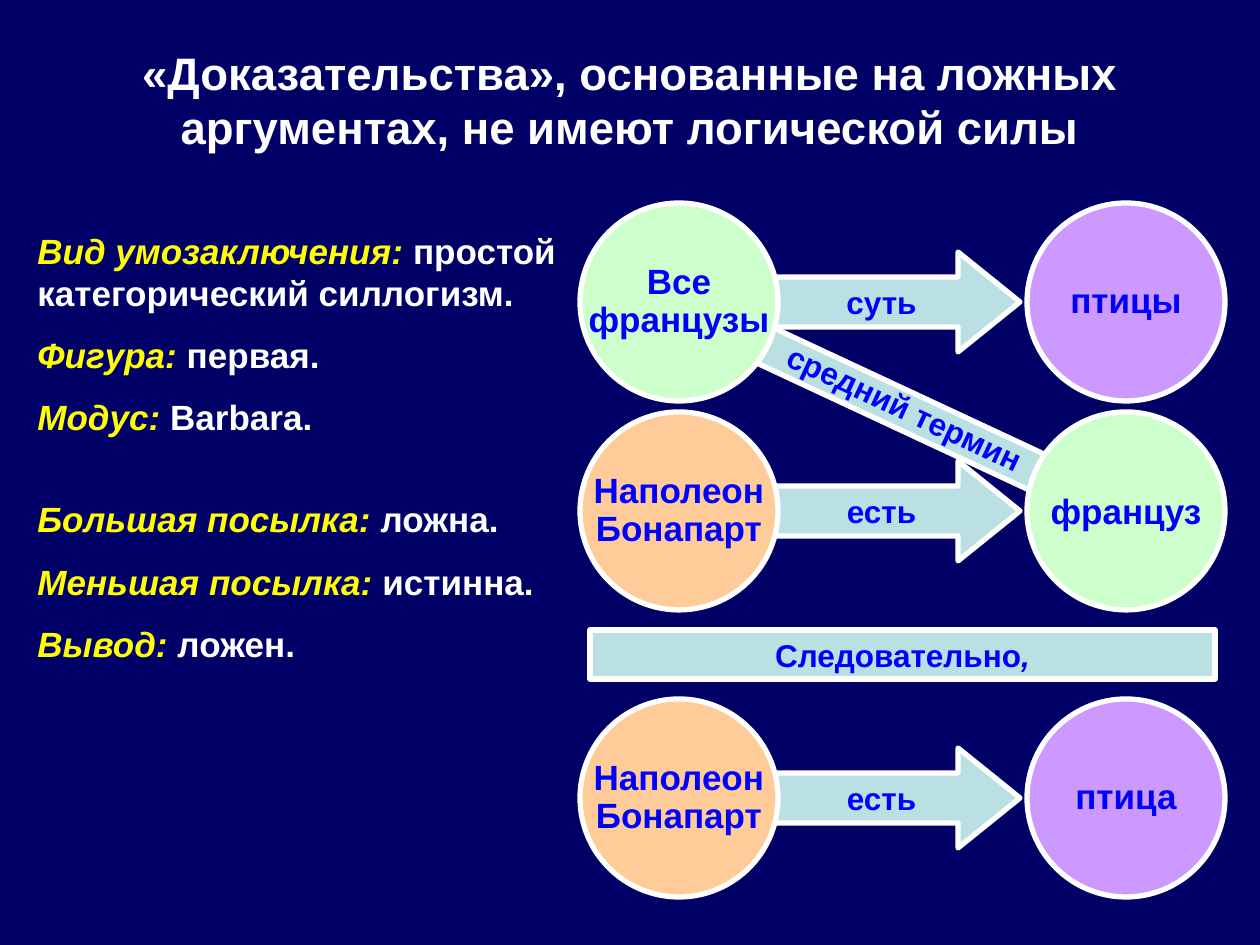
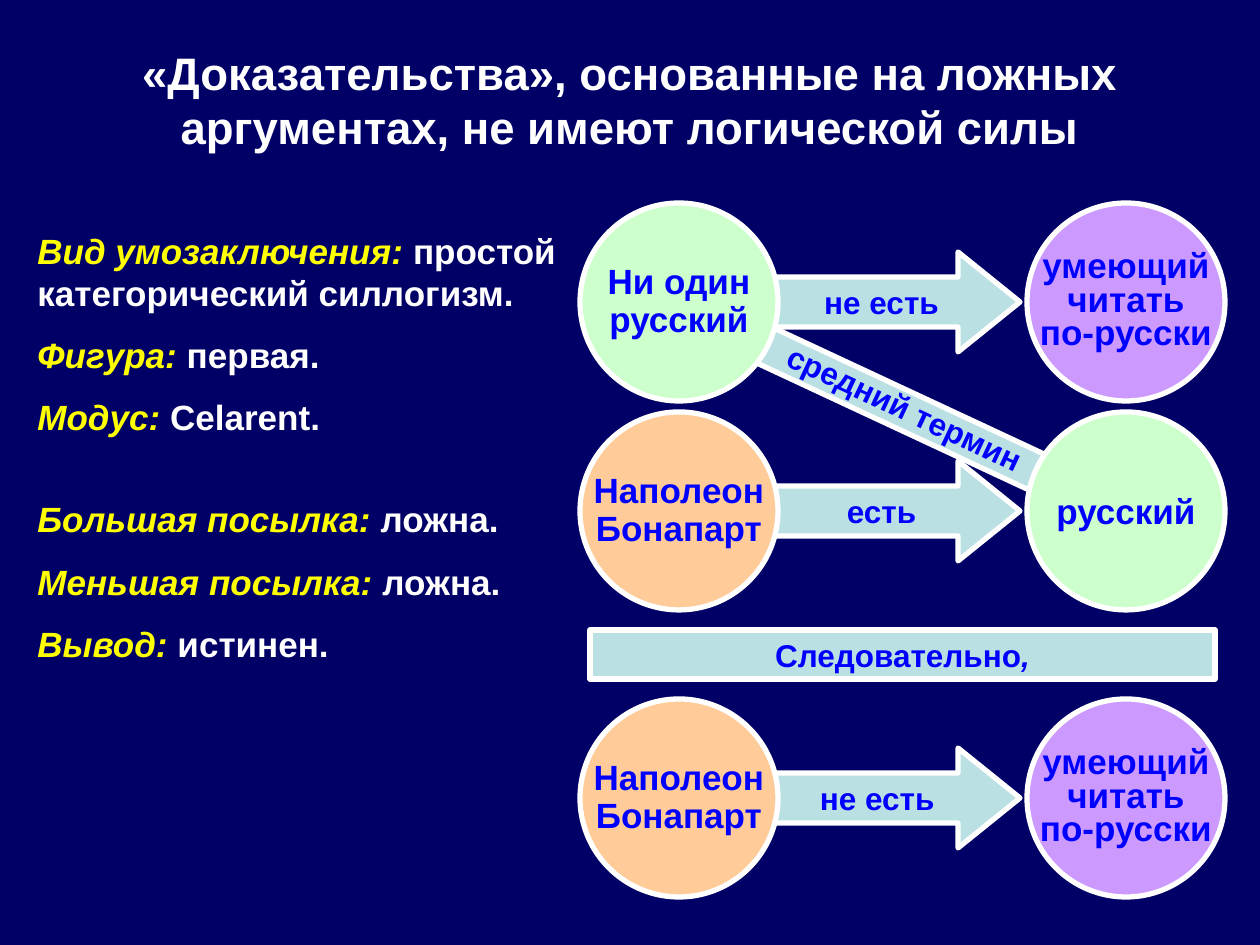
from pptx import Presentation
from pptx.dml.color import RGBColor
from pptx.enum.shapes import MSO_SHAPE
from pptx.enum.text import MSO_ANCHOR, PP_ALIGN
from pptx.util import Pt

ELLIPSE = MSO_SHAPE.OVAL
ARROW = MSO_SHAPE.RIGHT_ARROW
RECTANGLE = MSO_SHAPE.RECTANGLE
MIDDLE, TOP = MSO_ANCHOR.MIDDLE, MSO_ANCHOR.TOP
CENTER, LEFT = PP_ALIGN.CENTER, PP_ALIGN.LEFT

NAVY = RGBColor(0x00, 0x00, 0x66)
WHITE = RGBColor(0xFF, 0xFF, 0xFF)
YELLOW = RGBColor(0xFF, 0xFF, 0x00)
BLUE = RGBColor(0x00, 0x00, 0xFF)
ICE = RGBColor(0xBB, 0xE0, 0xE3)
GREEN = RGBColor(0xCC, 0xFF, 0xCC)
PEACH = RGBColor(0xFF, 0xCC, 0x99)
VIOLET = RGBColor(0xCC, 0x99, 0xFF)

TITLE = "«Доказательства», основанные на ложных аргументах, не имеют логической силы"
MIDDLE_TERM = "средний термин"
THEREFORE = ["Следовательно", ","]
NAPOLEON = "Наполеон\nБонапарт"
READER = "умеющий\nчитать\nпо-русски"

SYLLOGISMS = [
    {
        "mode": "Barbara.",
        "verdicts": [" ложна.", " истинна.", " ложен."],
        "judgements": [
            ("Все\nфранцузы", "суть", "птицы", 0.9),
            (NAPOLEON, "есть", "француз", 1.0),
            (NAPOLEON, "есть", "птица", 0.9),
        ],
    },
    {
        "mode": "Celarent.",
        "verdicts": [" ложна.", " ложна.", " истинен."],
        "judgements": [
            ("Ни один\nрусский", "не есть", READER, 0.8),
            (NAPOLEON, "есть", "русский", 1.0),
            (NAPOLEON, "не есть ", READER, 0.8),
        ],
    },
]

PX = 914400 / 126
SLIDE_SIZE = (1260, 945)
TITLE_BOX = (63, 38, 1134, 123)
ANALYSIS_BOX = (25, 223, 571, 496)
THEREFORE_BOX = (590, 630, 625, 49)
MIDDLE_TERM_BOX = (737, 387, 318, 39)
MIDDLE_TERM_ANGLE = 25
ROWS = [(203, GREEN, VIOLET), (412, PEACH, GREEN), (699, PEACH, VIOLET)]
SUBJECT_X, PREDICATE_X, CIRCLE = 580, 1027, 198
COPULA_X, COPULA_W, COPULA_H = 774, 246, 100
GAP, SECTION_GAP = 11.5, 34.5


def emu(*lengths):
    return [round(length * PX) for length in lengths]


def style(run, size, color, italic=False):
    font = run.font
    font.name, font.size, font.bold, font.italic = "Arial", Pt(size), True, italic
    font.color.rgb = color


def add_figure(slide, kind, box, fill, parts, size, spacing=1.0):
    figure = slide.shapes.add_shape(kind, *emu(*box))
    figure.shadow.inherit = False
    figure.fill.solid()
    figure.fill.fore_color.rgb = fill
    figure.line.color.rgb = WHITE
    figure.line.width = Pt(3)
    frame = figure.text_frame
    frame.word_wrap = False
    frame.vertical_anchor = MIDDLE
    label = frame.paragraphs[0]
    label.text = parts[0]
    for part in parts[1:]:
        label.add_run().text = part
    label.alignment = CENTER
    label.line_spacing = spacing
    for run in label.runs:
        style(run, size, BLUE, run.text == ",")
    return figure


def add_text_frame(slide, box, anchor):
    frame = slide.shapes.add_textbox(*emu(*box)).text_frame
    frame.word_wrap = True
    frame.vertical_anchor = anchor
    return frame


def add_title(slide):
    title = add_text_frame(slide, TITLE_BOX, MIDDLE).paragraphs[0]
    title.text = TITLE
    title.alignment = CENTER
    style(title.runs[0], 26, WHITE)


def add_analysis(slide, mode, verdicts):
    major, minor, conclusion = verdicts
    facts = [
        ("Вид умозаключения: ", "простой категорический силлогизм.", 0),
        ("Фигура:", " первая.", GAP),
        ("Модус: ", mode, GAP),
        ("Большая посылка:", major, SECTION_GAP),
        ("Меньшая посылка:", minor, GAP),
        ("Вывод:", conclusion, GAP),
    ]
    frame = add_text_frame(slide, ANALYSIS_BOX, TOP)
    for number, (term, value, gap) in enumerate(facts):
        fact = frame.add_paragraph() if number else frame.paragraphs[0]
        fact.text = term
        fact.add_run().text = value
        fact.alignment = LEFT
        if gap:
            fact.space_before = Pt(gap)
        style(fact.runs[0], 20, YELLOW, True)
        style(fact.runs[1], 20, WHITE)


def add_scheme(slide, judgements):
    for (y, _, _), (_, copula, _, _) in zip(ROWS, judgements):
        box = (COPULA_X, y + (CIRCLE - COPULA_H) // 2, COPULA_W, COPULA_H)
        arrow = add_figure(slide, ARROW, box, ICE, [copula], 18)
        arrow.adjustments[0] = 0.5
        arrow.adjustments[1] = 0.62

    add_figure(slide, RECTANGLE, THEREFORE_BOX, ICE, THEREFORE, 18)
    link = add_figure(slide, RECTANGLE, MIDDLE_TERM_BOX, ICE, [MIDDLE_TERM], 18)
    link.rotation = MIDDLE_TERM_ANGLE
    frame = link.text_frame
    frame.margin_left, frame.margin_top, frame.margin_right, frame.margin_bottom = emu(30, 0, 13, 6)

    for row, (subject, _, predicate, spacing) in zip(ROWS, judgements):
        y, subject_fill, predicate_fill = row
        add_figure(slide, ELLIPSE, (SUBJECT_X, y, CIRCLE, CIRCLE), subject_fill, [subject], 20, 0.9)
        add_figure(slide, ELLIPSE, (PREDICATE_X, y, CIRCLE, CIRCLE), predicate_fill, [predicate], 20, spacing)


def main():
    deck = Presentation()
    deck.slide_width, deck.slide_height = emu(*SLIDE_SIZE)
    for syllogism in SYLLOGISMS:
        slide = deck.slides.add_slide(deck.slide_layouts[6])
        slide.background.fill.solid()
        slide.background.fill.fore_color.rgb = NAVY
        add_title(slide)
        add_scheme(slide, syllogism["judgements"])
        add_analysis(slide, syllogism["mode"], syllogism["verdicts"])
    deck.save("out.pptx")


if __name__ == "__main__":
    main()
